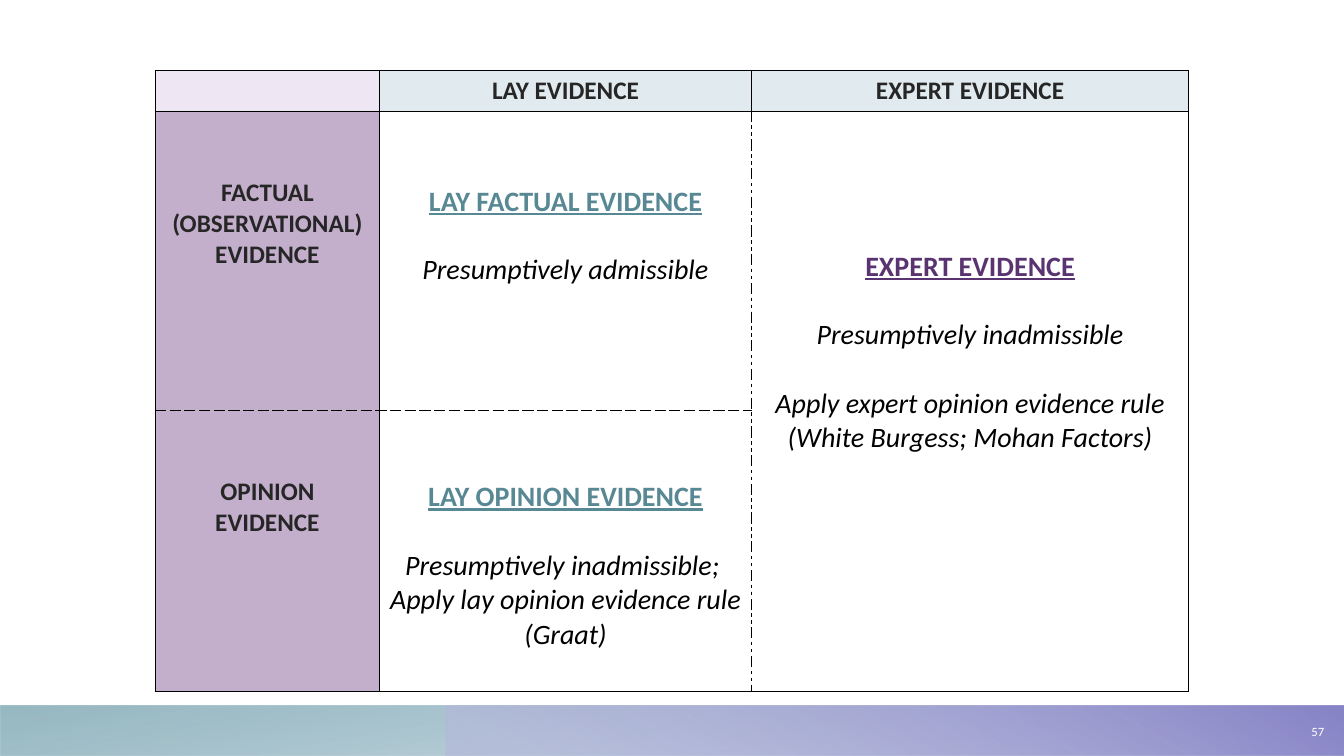
"""Build the slide that sorts evidence into lay and expert kinds."""
from lxml.etree import SubElement
from pptx import Presentation
from pptx.dml.color import RGBColor
from pptx.enum.shapes import MSO_SHAPE
from pptx.enum.text import MSO_ANCHOR, PP_ALIGN
from pptx.oxml import parse_xml
from pptx.oxml.ns import nsdecls, qn
from pptx.util import Pt

HUES = {
    "black": "000000", "white": "FFFFFF", "ink": "262626",
    "teal": "588894", "plum": "5A3471", "lilac": "C3AFCC",
    "pale": "EFE6F4", "mist": "E1EAEF",
    "blue": "6997AF", "sea": "84ACB6", "haze": "B7B5DD", "iris": "8784C7",
}


def style(run, size, hue, bold=False, slant=False, line=False):
    font = run.font
    font.name, font.size = "Calibri", Pt(size)
    font.bold, font.italic, font.underline = bold, slant, line
    font.color.rgb = RGBColor.from_string(HUES[hue])


def edge(cell, spot, dash):
    line = parse_xml(
        f'<a:{spot} {nsdecls("a")} w="12700"><a:solidFill>'
        f'<a:srgbClr val="{HUES["black"]}"/></a:solidFill>'
        f'<a:prstDash val="{dash}"/></a:{spot}>')
    order = ["lnL", "lnR", "lnT", "lnB"]
    cell._tc.get_or_add_tcPr().insert(order.index(spot), line)


deck = Presentation()
deck.slide_width, deck.slide_height = Pt(960), Pt(540)
slide = deck.slides.add_slide(deck.slide_layouts[6])

bands = [
    (0, 960, 180, 100, [(14, "blue", 28), (100, "sea", 85)]),
    (318, 642, 0, 240, [(9, "haze", 55), (99, "iris", 100)]),
]
for left, width, turn, angle, stops in bands:
    band = slide.shapes.add_shape(
        MSO_SHAPE.RECTANGLE, Pt(left), Pt(504), Pt(width), Pt(36))
    band.shadow.inherit = False
    band.line.fill.background()
    band.rotation = turn
    band.fill.background()
    props = band._element.spPr
    props.xfrm.set("flipH", "1")
    blend = parse_xml(f'<a:gradFill {nsdecls("a")} rotWithShape="1"/>')
    group = SubElement(blend, qn("a:gsLst"))
    for place, hue, alpha in stops:
        stop = SubElement(group, qn("a:gs"), pos=str(place * 1000))
        tint = SubElement(stop, qn("a:srgbClr"), val=HUES[hue])
        SubElement(tint, qn("a:alpha"), val=str(alpha * 1000))
    SubElement(blend, qn("a:lin"), ang=str(angle * 60000), scaled="0")
    props.replace(props.find(qn("a:noFill")), blend)

box = slide.shapes.add_textbox(Pt(919), Pt(505), Pt(34), Pt(35))
frame = box.text_frame
frame.word_wrap = True
frame.vertical_anchor = MSO_ANCHOR.MIDDLE
frame.text = "57"
frame.paragraphs[0].alignment = PP_ALIGN.RIGHT
style(frame.paragraphs[0].runs[0], 9, "white")

table = slide.shapes.add_table(
    3, 3, Pt(111), Pt(50.2), Pt(738), Pt(443.5)).table
table.first_row = table.horz_banding = False
for col, width in zip(table.columns, [160, 266, 312]):
    col.width = Pt(width)
for row, height in zip(table.rows, [29.3, 213.6, 200.6]):
    row.height = Pt(height)

fills = [["pale", "mist", "mist"]] + [["lilac", "white", "white"]] * 2
for r, names in enumerate(fills):
    for c, name in enumerate(names):
        cell = table.cell(r, c)
        cell.fill.solid()
        cell.fill.fore_color.rgb = RGBColor.from_string(HUES[name])
        edge(cell, "lnL", "sysDashDotDot" if r and c == 2 else "solid")
        edge(cell, "lnR", "sysDashDotDot" if r and c == 1 else "solid")
        edge(cell, "lnT", "dash" if r == 2 and c < 2 else "solid")
        edge(cell, "lnB", "dash" if r == 1 and c < 2 else "solid")
table.cell(1, 2).merge(table.cell(2, 2))

heads = [
    (0, 1, 3.6, "LAY EVIDENCE"),
    (0, 2, 3.6, "EXPERT EVIDENCE"),
    (1, 0, 47.6, "FACTUAL\n(OBSERVATIONAL)\vEVIDENCE"),
    (2, 0, 47.6, "OPINION EVIDENCE"),
]
for r, c, top, text in heads:
    cell = table.cell(r, c)
    cell.margin_top = Pt(top)
    cell.text_frame.text = text
    for para in cell.text_frame.paragraphs:
        para.alignment = PP_ALIGN.CENTER
        for run in para.runs:
            style(run, 18, "ink", bold=True)

rules = [
    (1, 1, 52.4, "teal", [1],
     "LAY FACTUAL EVIDENCE\nPresumptively admissible"),
    (2, 1, 50, "teal", [1],
     "LAY OPINION EVIDENCE\nPresumptively inadmissible; \n"
     "Apply lay opinion evidence rule (Graat)"),
    (1, 2, 98.8, "plum", [1, 2],
     "EXPERT EVIDENCE\nPresumptively inadmissible\n"
     "Apply expert opinion evidence rule (White Burgess; Mohan Factors)"),
]
for r, c, top, hue, gaps, text in rules:
    cell = table.cell(r, c)
    cell.margin_top = Pt(top)
    cell.text_frame.text = text
    for i, para in enumerate(cell.text_frame.paragraphs):
        para.alignment = PP_ALIGN.CENTER
        para.space_before = Pt(24.4 if i in gaps else 0)
        if i == 0:
            style(para.runs[0], 20, hue, bold=True, line=True)
        else:
            style(para.runs[0], 20, "black", slant=True)

deck.save("out.pptx")
